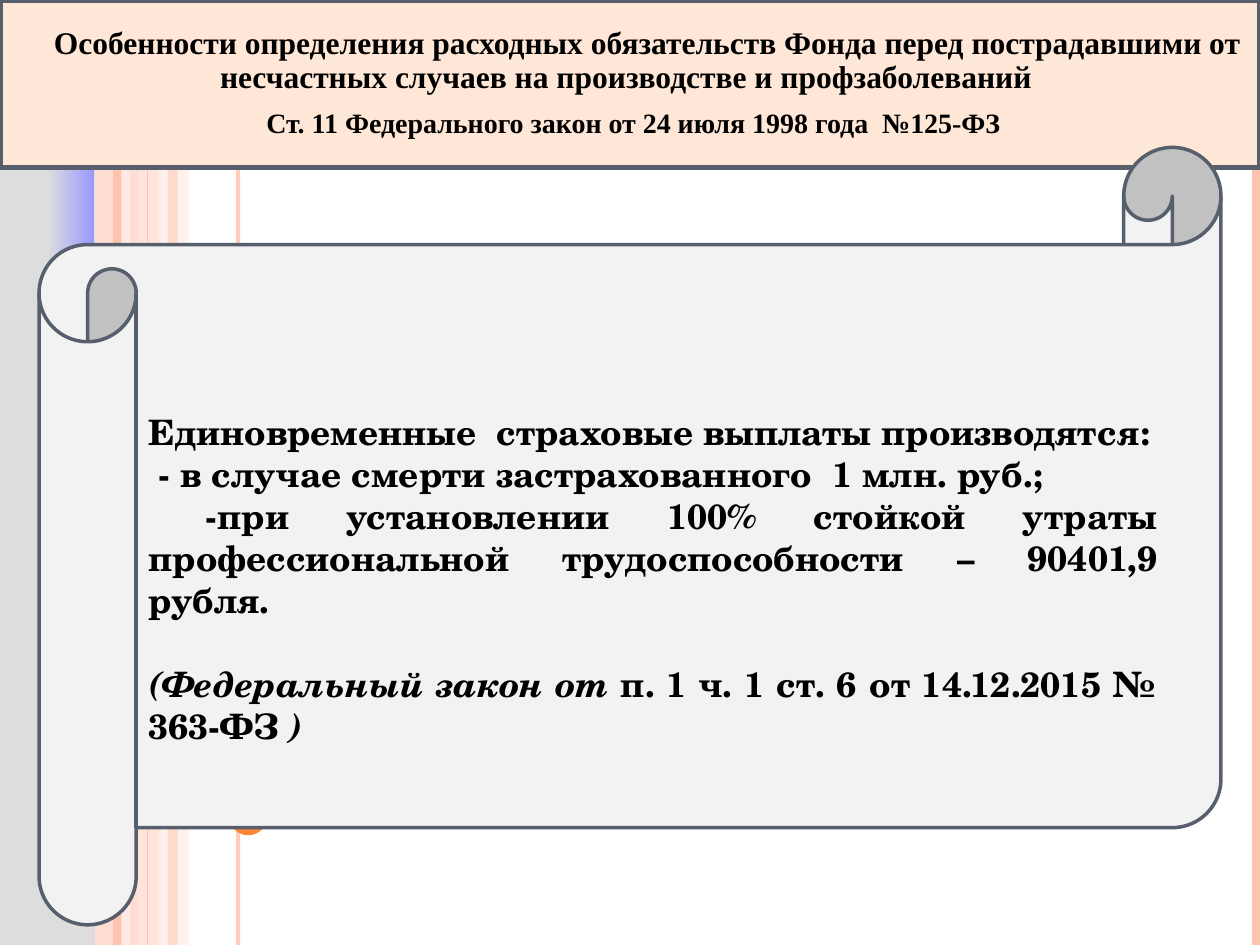
"""Builds a slide on one-time insurance payments shown on a scroll."""
from lxml.etree import SubElement
from pptx import Presentation
from pptx.dml.color import RGBColor
from pptx.enum.shapes import MSO_CONNECTOR, MSO_SHAPE as SHAPE
from pptx.enum.text import MSO_ANCHOR, PP_ALIGN as ALIGN
from pptx.oxml import parse_xml
from pptx.oxml.ns import nsdecls, qn
from pptx.util import Inches, Pt


def paint(color_format, color, alpha=100):
    color_format.rgb = RGBColor.from_string(color)
    if alpha < 100:
        srgb = color_format._xFill.find(qn("a:srgbClr"))
        SubElement(srgb, qn("a:alpha"), val=str(alpha * 1000))


def write(frame, text, font="Times New Roman", size=18, align=ALIGN.CENTER,
          before=0, spacing=1.0, indent=0):
    first = not frame.paragraphs[0].runs
    paragraph = frame.paragraphs[0] if first else frame.add_paragraph()
    paragraph.alignment = align
    paragraph.space_before = Pt(before)
    paragraph.line_spacing = spacing
    paragraph._p.get_or_add_pPr().set("indent", str(Pt(indent)))
    for number, part in enumerate(text.split("|")):
        if part:
            run = paragraph.add_run()
            run.text = part
            run.font.name = font
            run.font.size = Pt(size)
            run.font.bold = True
            run.font.italic = number % 2 == 1
            paint(run.font.color, "000000")


prs = Presentation()
prs.slide_width, prs.slide_height = Inches(10), Inches(7.5)
slide = prs.slides.add_slide(prs.slide_layouts[6])
shapes = slide.shapes

STRIPES = [
    (0.42, 0.67, "FEC3AE", 54),
    (1.08, 0.2, "FFD9CE", 70),
    (1.25, 0.25, "FFEDE8", 71),
    (1.33, 0.08, "FEC3AE", 51),
]
for left, width, color, alpha in STRIPES:
    stripe = shapes.add_shape(SHAPE.RECTANGLE, Inches(left), 0, Inches(width), Inches(7.5))
    stripe.shadow.inherit = False
    stripe.fill.solid()
    paint(stripe.fill.fore_color, color, alpha)
    stripe.line.fill.background()

RULES = [
    (1, "FFEDE8", 4.5, 83),
    (0.93, "FEC3AE", 4.5, 100),
    (1.89, "FEC3AE", 2.25, 82),
    (1.17, "FEC3AE", 0.75, 100),
    (9.97, "FEC3AE", 4.5, 100),
]
for x, color, weight, alpha in RULES:
    rule = shapes.add_connector(MSO_CONNECTOR.STRAIGHT, Inches(x), 0, Inches(x), Inches(7.5))
    rule.line.width = Pt(weight)
    rule.line.fill.solid()
    paint(rule.line.fill.fore_color, color, alpha)
    SubElement(rule._element.spPr, qn("a:effectLst"))

dot = shapes.add_shape(SHAPE.OVAL, Inches(1.82), Inches(6.33), Inches(0.3), Inches(0.3))
dot.shadow.inherit = False
dot.fill.solid()
paint(dot.fill.fore_color, "FE8637")
dot.line.fill.background()

side_band = shapes.add_shape(SHAPE.RECTANGLE, 0, Inches(0.01), Inches(0.75), Inches(7.49))
side_band.rotation = 180
side_band.shadow.inherit = False
paint(side_band.line.color, "DDDDDD")
side_band.line.width = Pt(0.75)
side_band._element.spPr.find(qn("a:prstGeom")).addnext(parse_xml(
    f'<a:gradFill {nsdecls("a")} rotWithShape="1"><a:gsLst>'
    '<a:gs pos="0"><a:srgbClr val="9999FF"/></a:gs>'
    '<a:gs pos="100000"><a:srgbClr val="DDDDDD"/></a:gs></a:gsLst>'
    '<a:path path="rect"><a:fillToRect l="100000" b="100000"/></a:path></a:gradFill>'))

PANELS = [
    (SHAPE.RECTANGLE, 0, 0, 10, 1.33, "FFE7D7", 3),
    (SHAPE.HORIZONTAL_SCROLL, 0.31, 1.17, 9.38, 6.17, "F2F2F2", 2),
]
frames = []
for kind, left, top, width, height, color, weight in PANELS:
    panel = shapes.add_shape(kind, Inches(left), Inches(top), Inches(width), Inches(height))
    panel.shadow.inherit = False
    panel.fill.solid()
    paint(panel.fill.fore_color, color)
    paint(panel.line.color, "575F6D")
    panel.line.width = Pt(weight)
    panel.text_frame.word_wrap = True
    panel.text_frame.vertical_anchor = MSO_ANCHOR.MIDDLE
    frames.append(panel.text_frame)
heading, payments = frames

write(heading, "Особенности определения расходных обязательств Фонда перед пострадавшими от "
      "несчастных случаев на производстве и профзаболеваний ",
      before=9, spacing=0.9, indent=20)
write(heading, " Ст. 11 Федерального закон от 24 июля 1998 года  №125-ФЗ",
      size=16, before=8, spacing=0.9)

payments.margin_top = Inches(0.72)
payments.margin_right = Inches(0.12)
PAYMENT_LINES = [
    ("Единовременные  страховые выплаты производятся:", ALIGN.LEFT, 0),
    (" - в случае смерти застрахованного  1 млн. руб.;", ALIGN.JUSTIFY, 0),
    (" -при установлении 100% стойкой утраты профессиональной трудоспособности "
     "– 90401,9 рубля.", ALIGN.JUSTIFY, 0),
    ("|(Федеральный закон от |п. 1 ч. 1 ст. 6 от 14.12.2015 № 363-ФЗ| )", ALIGN.JUSTIFY, 24),
]
for text, align, before in PAYMENT_LINES:
    write(payments, text, font="TeX Gyre Schola", size=20, align=align, before=before)

prs.save("out.pptx")
